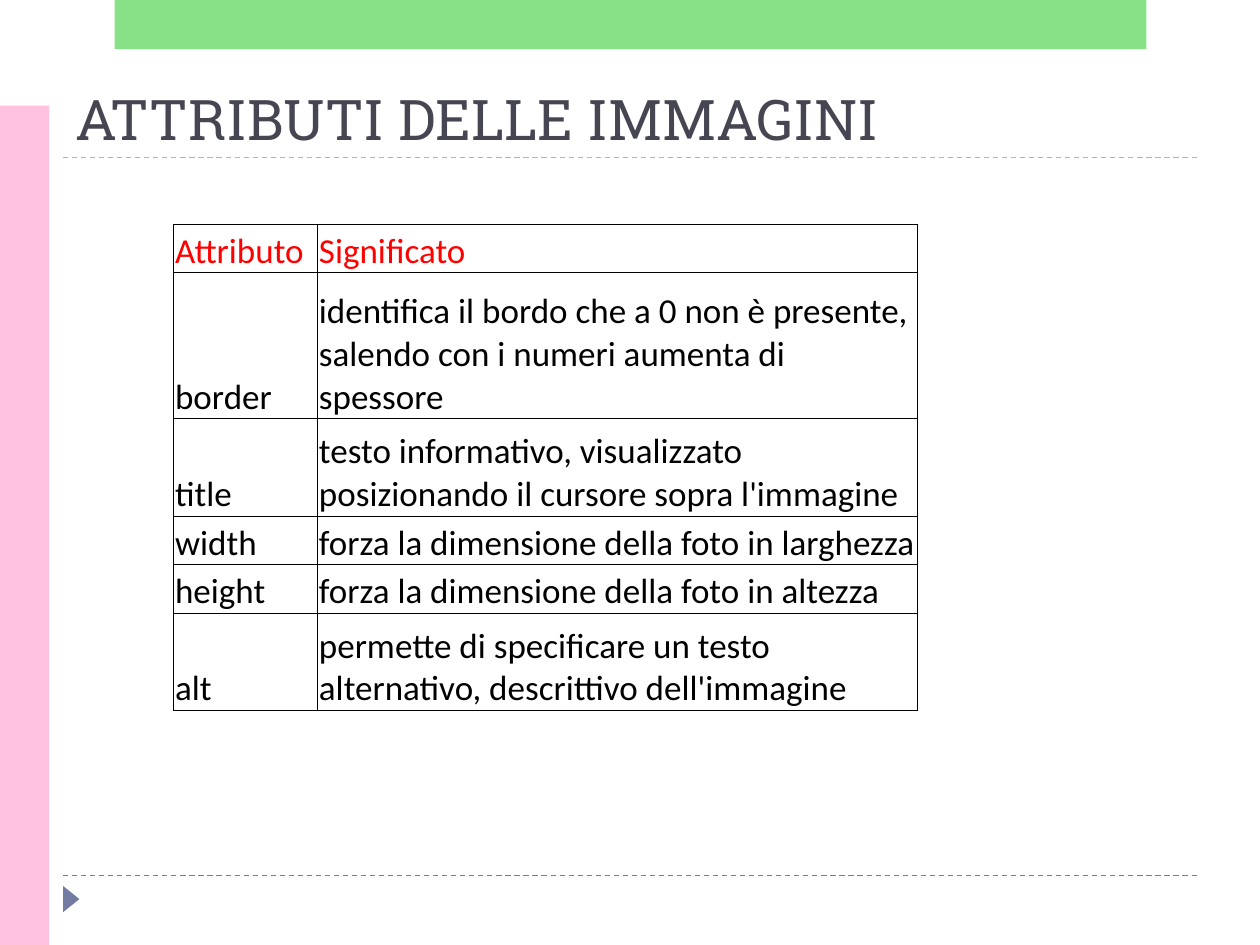
from dataclasses import dataclass
from lxml.etree import SubElement as Sub
from pptx import Presentation
from pptx.dml.color import RGBColor as RGB
from pptx.enum.dml import MSO_LINE as Dash
from pptx.enum.shapes import MSO_CONNECTOR as Link, MSO_SHAPE as Kind
from pptx.enum.text import MSO_ANCHOR as Anchor, MSO_AUTO_SIZE as Fit, PP_ALIGN as Align
from pptx.oxml.ns import qn
from pptx.util import Cm, Pt


@dataclass
class Theme:
    head: str = "Roboto Slab"
    body: str = "Calibri"
    big: int = 32
    text: int = 20
    ink: str = "464653"
    black: str = "000000"
    red: str = "FF0000"
    blue: str = "727CA3"
    pale: str = "9FB8CD"
    pink: str = "FFC1E0"
    green: str = "62D862"


def write(frame, words, face, size, tone):
    para = frame.paragraphs[0]
    para.alignment = Align.LEFT
    run = para.add_run()
    run.text = words
    run.font.name = face
    run.font.size = Pt(size)
    run.font.bold = False
    run.font.color.rgb = RGB.from_string(tone)


def edge(cell):
    props = cell._tc.get_or_add_tcPr()
    for side in ("lnL", "lnR", "lnT", "lnB"):
        line = Sub(props, qn(f"a:{side}"), w=str(Pt(0.5)))
        fill = Sub(line, qn("a:solidFill"))
        Sub(fill, qn("a:srgbClr"), val=theme.black)


theme = Theme()
deck = Presentation()
deck.slide_width, deck.slide_height = Cm(25.4), Cm(19.05)
slide = deck.slides.add_slide(deck.slide_layouts[5])
shapes = slide.shapes

for y, tone in ((17.65, theme.blue), (3.18, theme.pale)):
    rule = shapes.add_connector(Link.STRAIGHT, Cm(1.27), Cm(y), Cm(24.13), Cm(y))
    rule.line.color.rgb = RGB.from_string(tone)
    rule.line.width = Pt(0.75)
    rule.line.dash_style = Dash.DASH
    Sub(rule._element.spPr, qn("a:effectLst"))

for kind, x, y, wide, high, tone, turn, alpha in (
    (Kind.ISOSCELES_TRIANGLE, 1.17, 17.96, 0.53, 0.33, theme.blue, 90, 100),
    (Kind.RECTANGLE, 0, 2.13, 0.99, 16.92, theme.pink, 0, 100),
    (Kind.RECTANGLE, 2.31, 0, 20.8, 0.99, theme.green, 0, 76),
):
    mark = shapes.add_shape(kind, Cm(x), Cm(y), Cm(wide), Cm(high))
    mark.rotation = turn
    mark.shadow.inherit = False
    mark.fill.solid()
    mark.fill.fore_color.rgb = RGB.from_string(tone)
    mark.line.fill.background()
    if alpha < 100:
        shade = mark._element.spPr.find(f".//{qn('a:srgbClr')}")
        Sub(shade, qn("a:alpha"), val=str(alpha * 1000))

title = shapes.title
title.left, title.top, title.width, title.height = Cm(1.27), Cm(1.4), Cm(22.86), Cm(1.78)
frame = title.text_frame
frame.auto_size = Fit.NONE
frame.word_wrap = True
frame.vertical_anchor = Anchor.BOTTOM
write(frame, "ATTRIBUTI DELLE IMMAGINI", theme.head, theme.big, theme.ink)

rows = (
    ("Attributo", "Significato", 1),
    ("border", "identifica il bordo che a 0 non è presente, salendo con i numeri aumenta di spessore", 3),
    ("title", "testo informativo, visualizzato posizionando il cursore sopra l'immagine", 2),
    ("width", "forza la dimensione della foto in larghezza", 1),
    ("height", "forza la dimensione della foto in altezza", 1),
    ("alt", "permette di specificare un testo alternativo, descrittivo dell'immagine", 2),
)
step = 0.98
total = step * sum(row[2] for row in rows)
grid = shapes.add_table(len(rows), 2, Cm(3.5), Cm(4.52), Cm(15), Cm(total)).table
grid.first_row = grid.horz_banding = False
for col, wide in zip(grid.columns, (2.9, 12.1)):
    col.width = Cm(wide)
for r, (name, note, lines) in enumerate(rows):
    grid.rows[r].height = Cm(step * lines)
    for c, words in enumerate((name, note)):
        cell = grid.cell(r, c)
        edge(cell)
        cell.fill.background()
        cell.margin_left = cell.margin_right = cell.margin_top = Cm(0.03)
        cell.margin_bottom = 0
        cell.vertical_anchor = Anchor.BOTTOM
        tone = theme.black if r else theme.red
        write(cell.text_frame, words, theme.body, theme.text, tone)

deck.save("out.pptx")
